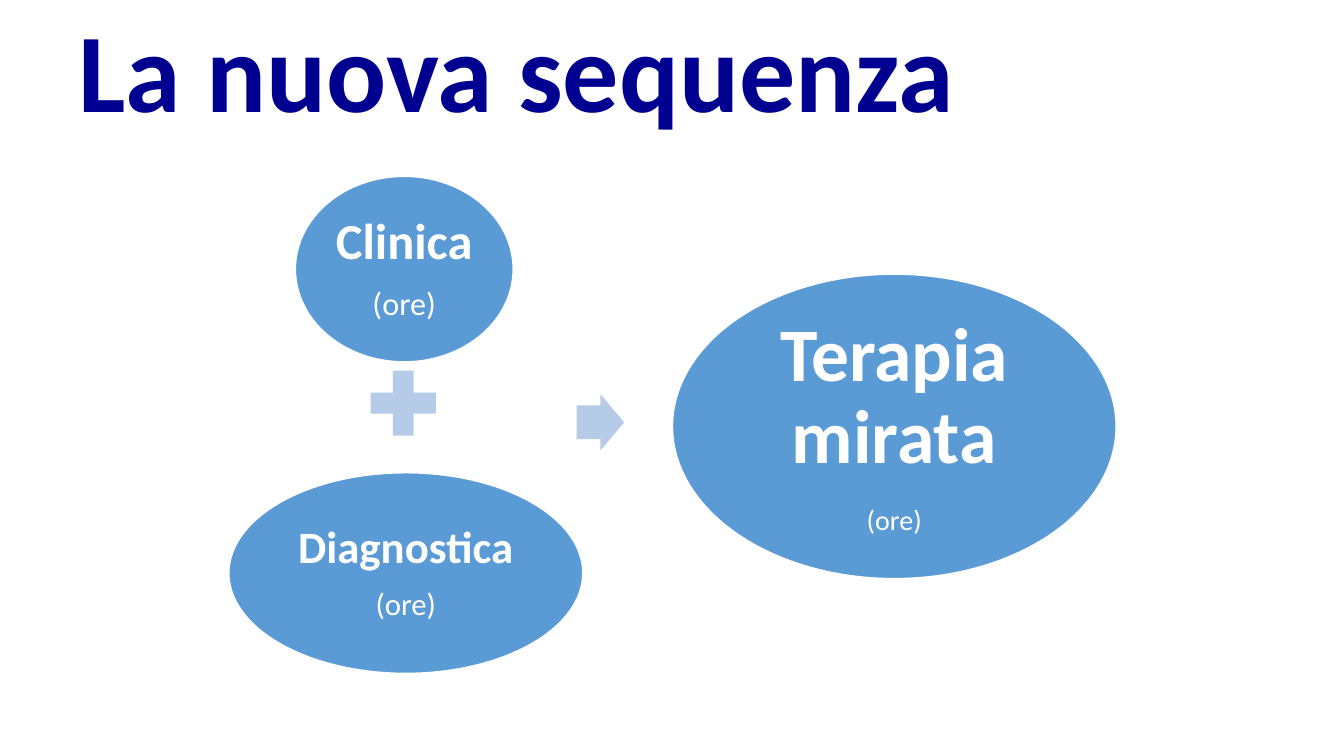
from dataclasses import dataclass

from pptx import Presentation
from pptx.dml.color import RGBColor
from pptx.enum.shapes import MSO_SHAPE
from pptx.enum.text import MSO_ANCHOR, PP_ALIGN
from pptx.util import Emu, Pt

TITLE = ("La nuova sequenza", (68, 13, 1200, 125))
STAGES = [
    ("Clinica", "(ore)", (293, 175, 216, 184), 36, 23, 5),
    ("Diagnostica", "(ore)", (227, 469, 351, 199), 32, 22, 4),
    ("Terapia mirata", "(ore)", (667, 272, 440, 302), 54, 20, 7),
]
SIGNS = [
    (MSO_SHAPE.MATH_PLUS, (356, 356, 88, 88), ()),
    (MSO_SHAPE.RIGHT_ARROW, (572, 391, 47, 56), (0.6, 0.5)),
]


@dataclass(frozen=True)
class Theme:
    font: str = "Calibri"
    title_size: int = 80
    title: RGBColor = RGBColor(0x00, 0x00, 0x90)
    stage: RGBColor = RGBColor(0x5B, 0x9B, 0xD5)
    sign: RGBColor = RGBColor(0xB5, 0xCB, 0xE7)
    light: RGBColor = RGBColor(0xFF, 0xFF, 0xFF)
    line_spacing: float = 0.9
    gap_ratio: float = 0.35


THEME = Theme()
PX = 9144


def px(lengths):
    return [Emu(length * PX) for length in lengths]


def write(paragraph, text, *, size, color, bold=False, align=PP_ALIGN.LEFT, gap=0):
    paragraph.alignment = align
    paragraph.line_spacing = THEME.line_spacing
    paragraph.space_after = Pt(round(size * gap, 1))
    run = paragraph.add_run()
    run.text = text
    run.font.name = THEME.font
    run.font.size = Pt(size)
    run.font.bold = bold
    run.font.color.rgb = color


def set_frame(frame, inset_x, inset_y):
    frame.word_wrap = True
    frame.vertical_anchor = MSO_ANCHOR.MIDDLE
    frame.margin_left = frame.margin_right = Emu(inset_x * PX)
    frame.margin_top = frame.margin_bottom = Emu(inset_y * PX)


def add_figure(slide, preset, box, fill):
    figure = slide.shapes.add_shape(preset, *px(box))
    figure.shadow.inherit = False
    figure.fill.solid()
    figure.fill.fore_color.rgb = fill
    figure.line.fill.background()
    return figure


def add_title(slide):
    text, box = TITLE
    heading = slide.shapes.add_textbox(*px(box)).text_frame
    set_frame(heading, 10, 5)
    write(heading.paragraphs[0], text, size=THEME.title_size, color=THEME.title, bold=True)


def add_stage(slide, name, duration, box, name_size, duration_size, inset):
    oval = add_figure(slide, MSO_SHAPE.OVAL, box, THEME.stage)
    oval.line.color.rgb = THEME.light
    oval.line.width = Pt(1)
    label = oval.text_frame
    set_frame(label, inset, inset)
    shared = {"color": THEME.light, "align": PP_ALIGN.CENTER, "gap": THEME.gap_ratio}
    write(label.paragraphs[0], name, size=name_size, bold=True, **shared)
    write(label.add_paragraph(), duration, size=duration_size, **shared)


def main():
    deck = Presentation()
    deck.slide_width, deck.slide_height = px((1333, 750))
    slide = deck.slides.add_slide(deck.slide_layouts[6])
    add_title(slide)
    for stage in STAGES:
        add_stage(slide, *stage)
    for preset, box, adjustments in SIGNS:
        sign = add_figure(slide, preset, box, THEME.sign)
        for index, ratio in enumerate(adjustments):
            sign.adjustments[index] = ratio
    deck.save("out.pptx")


if __name__ == "__main__":
    main()
